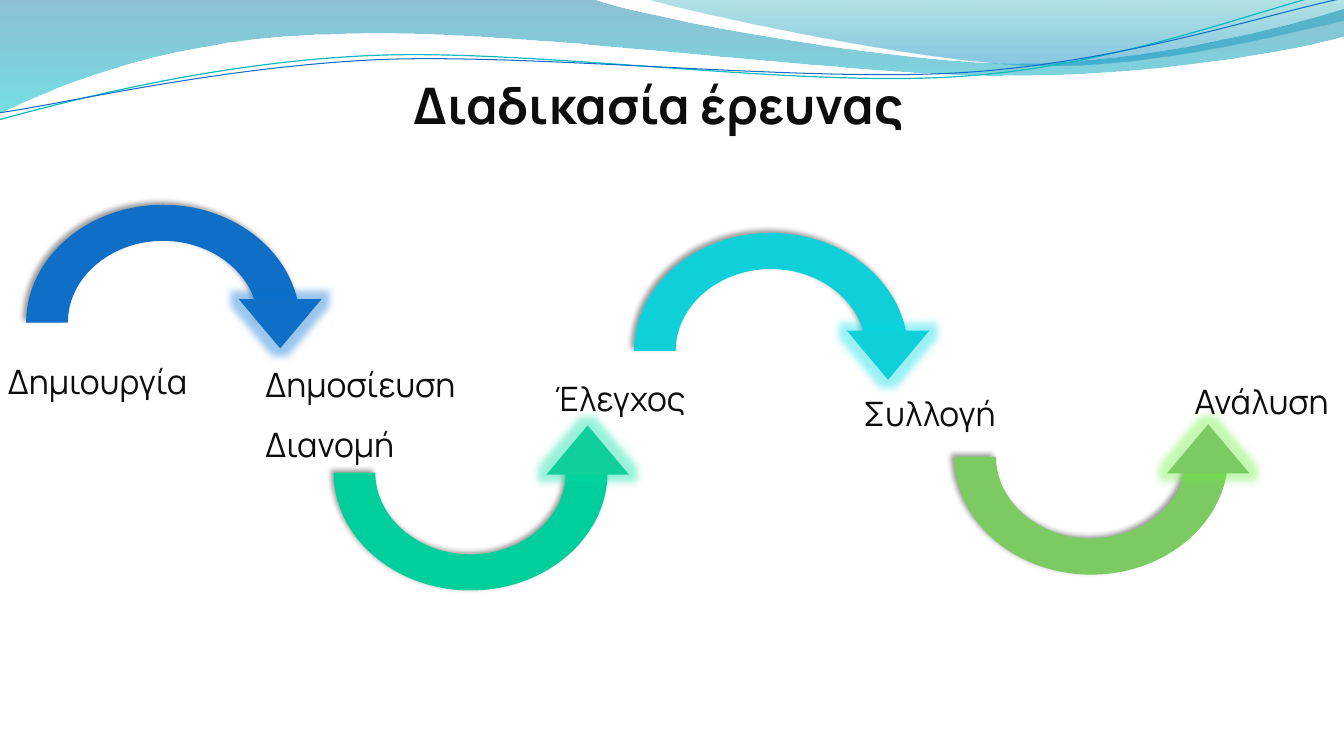
import lxml.etree
import pptx
import pptx.dml.color
import pptx.enum.shapes
import pptx.enum.text
import pptx.oxml.ns
import pptx.util

Cm = pptx.util.Cm
Pt = pptx.util.Pt
Align = pptx.enum.text.PP_ALIGN
qn = pptx.oxml.ns.qn

FONT = "Manrope"
INK = "0D0D0D"
TITLE = "Διαδικασία έρευνας"

LABELS = [
    (["Δημιουργία"], -1.75, 8.46, 8.41, Align.CENTER),
    (["Δημοσίευση", "Διανομή"], 6.43, 8.53, 7.29, Align.LEFT),
    (["Έλεγχος"], 13.74, 8.89, 7.29, Align.LEFT),
    (["Συλλογή"], 21.51, 9.27, 7.29, Align.LEFT),
    (["Ανάλυση"], 29.85, 8.97, 7.29, Align.LEFT),
]

ARROWS = [
    dict(left=8.41, base=11.91, bulge=1, head_top=10.72, arc_colour="00CF9B", head_colour="10CF9B"),
    dict(left=15.98, base=8.84, bulge=-1, head_top=8.33, arc_colour="0FD0D9", head_colour="0FD0D9"),
    dict(left=24.05, base=11.51, bulge=1, head_top=10.69, arc_colour="7CCA62", head_colour="7CCA62"),
    dict(left=0.66, base=8.13, bulge=-1, head_top=7.54, arc_colour="0F6FC6", head_colour="0F6FC6"),
]
OUTER = (3.45, 2.97)
INNER = (2.4, 2.06)
HEAD_SIZE = (2.08, 1.24)
HEAD_OFFSET = 5.36
ROUNDNESS = 0.55

BANDS = [
    ([(0, 0), (14.91, -0.03), (16.1, 0.43, 22.48, 1.6, 25.68, 1.6),
      (28.88, 1.6, 32.46, 0.66, 33.86, 0.23), (33.91, 0.91),
      (33.3, 1.12, 29.46, 1.93, 25.25, 1.91),
      (21.06, 1.91, 12.93, 0.71, 8.71, 0.86),
      (4.37, 0.91, 1.55, 2.11, -0.03, 2.87)],
     [(0, "0074A1", 45), (1, "00C6CF", 55)]),
    ([(16.23, -0.03), (17.25, 0.28, 23.09, 1.57, 26.04, 1.65),
      (28.98, 1.75, 32.56, 0.81, 33.86, 0.53), (33.86, 0)],
     [(0, "00A1A9", 30), (0.8, "008BBF", 45)]),
]
WAVES = [
    ([(-0.03, 3.02), (1.63, 2.57, 5.36, 1.57, 9.37, 1.4),
      (13.39, 1.22, 20.04, 2.21, 24.13, 1.93),
      (28.19, 1.68, 31.78, 0.2, 33.81, -0.25)], "0AB8BF", 0.85),
    ([(0, 2.84), (1.6, 2.62, 5.54, 1.68, 9.6, 1.5),
      (13.64, 1.35, 20.22, 2.08, 24.26, 1.83),
      (28.32, 1.57, 31.88, 0.36, 33.88, -0.05)], "0F6FC6", 0.75),
]


def rgb(value):
    return pptx.dml.color.RGBColor.from_string(value)


def half_ellipse(centre, base, rx, ry):
    kx, ky = ROUNDNESS * rx, ROUNDNESS * ry
    return [(centre - rx, base + ky, centre - kx, base + ry, centre, base + ry),
            (centre + kx, base + ry, centre + rx, base + ky, centre + rx, base)]


def outline(slide, segments, close=True):
    points = [(Cm(s[i]), Cm(s[i + 1])) for s in segments for i in range(0, len(s), 2)]
    builder = slide.shapes.build_freeform(*points[0])
    builder.add_line_segments(points[1:], close=close)
    shape = builder.convert_to_shape()
    shape.shadow.inherit = False
    strokes = iter(list(shape._element.spPr.iter(qn("a:lnTo"))))
    for segment in segments[1:]:
        stroke = next(strokes)
        if len(segment) == 6:
            curve = lxml.etree.Element(qn("a:cubicBezTo"))
            stroke.addprevious(curve)
            for control in (stroke, next(strokes), next(strokes)):
                curve.append(control[0])
                control.getparent().remove(control)
    return shape


def paint(shape, colour):
    shape.fill.solid()
    shape.fill.fore_color.rgb = rgb(colour)
    shape.line.fill.background()


def add_effect(shape, kind, colour, changes, **settings):
    effects = shape._element.spPr.find(qn("a:effectLst"))
    effect = lxml.etree.SubElement(effects, qn(kind), {k: str(v) for k, v in settings.items()})
    tone = lxml.etree.SubElement(effect, qn("a:srgbClr"), val=colour)
    for name, percent in changes:
        lxml.etree.SubElement(tone, qn(name), val=str(percent * 1000))


def write(frame, lines, size, align, bold=False):
    frame.word_wrap = True
    frame.vertical_anchor = pptx.enum.text.MSO_ANCHOR.TOP
    frame.text = "\n".join(lines)
    for paragraph in frame.paragraphs:
        paragraph.alignment = align
        paragraph.line_spacing = 1.5
        paragraph.space_before = Pt(0)
        paragraph.font.name = FONT
        paragraph.font.size = Pt(size)
        paragraph.font.bold = bold
        paragraph.font.color.rgb = rgb(INK)


def add_band(slide, segments, stops):
    band = outline(slide, segments)
    band.line.fill.background()
    band.fill.gradient()
    band.fill.gradient_angle = 270
    for stop, (position, colour, _) in zip(band.fill.gradient_stops, stops):
        stop.position = position
        stop.color.rgb = rgb(colour)
    tones = band._element.spPr.find(qn("a:gradFill")).iter(qn("a:srgbClr"))
    for tone, (_, _, opacity) in zip(list(tones), stops):
        lxml.etree.SubElement(tone, qn("a:alpha"), val=str(opacity * 1000))


def add_wave(slide, segments, colour, width):
    wave = outline(slide, segments, close=False)
    wave.fill.background()
    wave.line.color.rgb = rgb(colour)
    wave.line.width = Pt(width)


def add_arrow(slide, left, base, bulge, head_top, arc_colour, head_colour):
    centre = left + OUTER[0]
    rim = half_ellipse(centre, base, OUTER[0], bulge * OUTER[1])
    hollow = half_ellipse(centre, base, -INNER[0], bulge * INNER[1])
    arc = outline(slide, [(left, base), *rim, (centre + INNER[0], base), *hollow])
    paint(arc, arc_colour)
    add_effect(arc, "a:outerShdw", "000000", [("a:alpha", 40)], blurRad=Pt(4),
               dist=Pt(3), dir=225 * 60000, algn="br", rotWithShape=0)

    head = slide.shapes.add_shape(
        pptx.enum.shapes.MSO_SHAPE.ISOSCELES_TRIANGLE,
        Cm(left + HEAD_OFFSET), Cm(head_top), *map(Cm, HEAD_SIZE))
    head.rotation = 180 if bulge < 0 else 0
    head.shadow.inherit = False
    paint(head, head_colour)
    add_effect(head, "a:glow", head_colour,
               [("a:satMod", 175), ("a:alpha", 40)], rad=Pt(11))


def main():
    deck = pptx.Presentation()
    deck.slide_width, deck.slide_height = Cm(33.87), Cm(19.05)
    slide = deck.slides.add_slide(deck.slide_layouts[5])

    for band in BANDS:
        add_band(slide, *band)
    for wave in WAVES:
        add_wave(slide, *wave)
    for arrow in ARROWS:
        add_arrow(slide, **arrow)
    for lines, left, top, width, align in LABELS:
        label = slide.shapes.add_textbox(Cm(left), Cm(top), Cm(width), Cm(3.33))
        write(label.text_frame, lines, 24, align)

    title = slide.shapes.title
    title.left, title.top, title.width, title.height = map(Cm, (1.24, 0.99, 30.71, 2.57))
    title.text_frame.auto_size = pptx.enum.text.MSO_AUTO_SIZE.NONE
    write(title.text_frame, [TITLE], 36, Align.CENTER, bold=True)

    deck.save("out.pptx")


if __name__ == "__main__":
    main()
